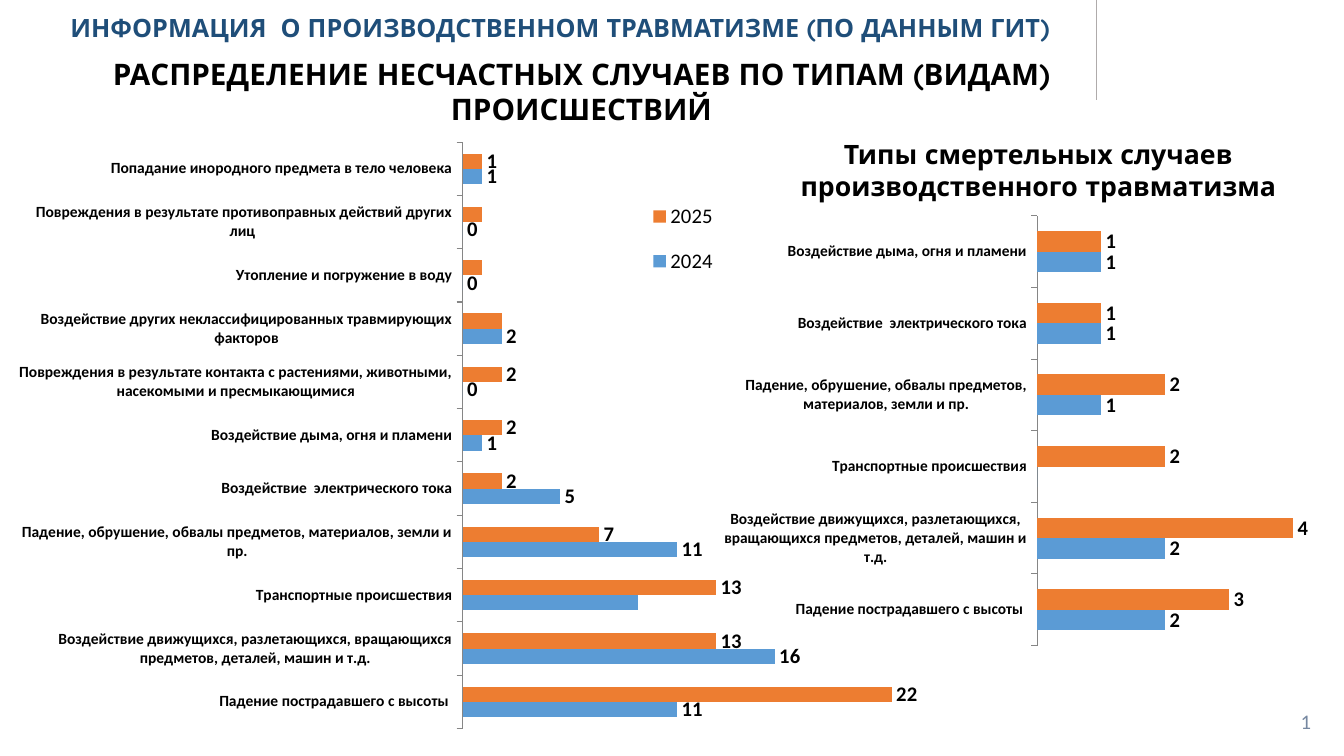
import pptx
import pptx.chart.data
import pptx.dml.color
import pptx.enum.chart
import pptx.enum.shapes
import pptx.enum.text
import pptx.oxml
import pptx.oxml.ns
import pptx.util

Inches = pptx.util.Inches
Pt = pptx.util.Pt
Align = pptx.enum.text.PP_ALIGN
Anchor = pptx.enum.text.MSO_ANCHOR
ChartEnum = pptx.enum.chart

COLORS = {"navy": "1F4E79", "black": "000000", "number": "7688A1", "rule": "AFABAB",
          "axis": "868686", "2024": "5B9BD5", "2025": "ED7D31"}

FALL = "Падение пострадавшего с высоты "
MOVING = "Воздействие движущихся, разлетающихся, вращающихся предметов, деталей, машин и т.д."
TRANSPORT = "Транспортные происшествия"
COLLAPSE = "Падение, обрушение, обвалы предметов, материалов, земли и пр."
ELECTRIC = "Воздействие  электрического тока"
SMOKE = "Воздействие дыма, огня и пламени"
COMMON_TYPES = [FALL, MOVING, TRANSPORT, COLLAPSE, ELECTRIC, SMOKE]
OTHER_TYPES = [
    "Повреждения в результате контакта с растениями, животными, насекомыми и пресмыкающимися",
    "Воздействие других неклассифицированных травмирующих факторов",
    "Утопление и погружение в воду",
    "Повреждения в результате противоправных действий других лиц ",
    "Попадание инородного предмета в тело человека",
]


def rgb(name):
    """Return the named colour."""
    return pptx.dml.color.RGBColor.from_string(COLORS[name])


def chart_layout(position, inner=False):
    """Return a manual layout for fractions of the chart area."""
    target = '<c:layoutTarget val="inner"/>' if inner else ""
    modes = "".join(f'<c:{axis}Mode val="edge"/>' for axis in "xy")
    sizes = "".join(f'<c:{key} val="{value}"/>' for key, value in zip("xywh", position))
    return pptx.oxml.parse_xml(
        f'<c:layout {pptx.oxml.ns.nsdecls("c")}><c:manualLayout>'
        f"{target}{modes}{sizes}</c:manualLayout></c:layout>")


def place_layout(element, index, layout):
    """Replace the layout of a chart part."""
    for old in element.findall(pptx.oxml.ns.qn("c:layout")):
        element.remove(old)
    element.insert(index, layout)


class SlideBuilder:
    """Hold the fonts and the current page."""

    heading_font = "Quicksand"
    body_font = "Calibri"

    def __init__(self, page):
        """Keep the page to fill."""
        self.page = page

    def style(self, font, name, size, color, bold=False):
        """Format a font."""
        font.name, font.size, font.bold = name, Pt(size), bold
        font.color.rgb = rgb(color)

    def fill_heading(self, box, text, size, color, align, insets):
        """Put one heading paragraph into a box."""
        frame = box.text_frame
        frame.word_wrap = True
        frame.auto_size = pptx.enum.text.MSO_AUTO_SIZE.NONE
        frame.vertical_anchor = Anchor.TOP
        (frame.margin_left, frame.margin_top,
         frame.margin_right, frame.margin_bottom) = map(Inches, insets)
        para = frame.paragraphs[0]
        para.alignment = align
        span = para.add_run()
        span.text = text
        self.style(span.font, self.heading_font, size, color, True)
        return para

    def title(self, place, text):
        """Fill the title placeholder."""
        box = self.page.shapes.title
        box.left, box.top, box.width, box.height = map(Inches, place)
        para = self.fill_heading(box, text, 17, "navy", Align.LEFT, (0.1, 0.01, 0.1, 0))
        para.line_spacing = 0.9

    def heading(self, place, text, size, insets=(0.1, 0.05, 0.1, 0.05)):
        """Add a centred heading."""
        box = self.page.shapes.add_textbox(*map(Inches, place))
        self.fill_heading(box, text, size, "black", Align.CENTER, insets)

    def page_number(self, place, number):
        """Add a slide number field."""
        box = self.page.shapes.add_textbox(*map(Inches, place))
        frame = box.text_frame
        frame.word_wrap = True
        frame.vertical_anchor = Anchor.MIDDLE
        para = frame.paragraphs[0]
        para.alignment = Align.RIGHT
        para._p.append(pptx.oxml.parse_xml(
            f'<a:fld {pptx.oxml.ns.nsdecls("a")} type="slidenum" '
            'id="{B6F15528-21DE-4FAA-801E-634DDDAF4B2B}"><a:rPr lang="ru-RU" sz="1400">'
            f'<a:solidFill><a:srgbClr val="{COLORS["number"]}"/></a:solidFill>'
            f'<a:latin typeface="{self.body_font}"/></a:rPr><a:t>{number}</a:t></a:fld>'))

    def rule(self, start, end):
        """Add a thin straight line."""
        line = self.page.shapes.add_connector(
            pptx.enum.shapes.MSO_CONNECTOR.STRAIGHT, *map(Inches, start + end))
        line.line.color.rgb = rgb("rule")
        line.line.width = Pt(0.75)
        line._element.spPr.append(pptx.oxml.parse_xml(
            f'<a:effectLst {pptx.oxml.ns.nsdecls("a")}/>'))

    def bar_chart(self, place, types, values, unlabelled, maximum, plot_area, legend=None):
        """Add a clustered bar chart by year."""
        data = pptx.chart.data.CategoryChartData()
        data.categories = types
        for year, counts in values.items():
            data.add_series(year, counts)
        chart = self.page.shapes.add_chart(
            ChartEnum.XL_CHART_TYPE.BAR_CLUSTERED, *map(Inches, place), data).chart
        chart.has_title = False
        self.style(chart.font, self.body_font, 18, "black")
        plot = chart.plots[0]
        plot.vary_by_categories = False
        plot.gap_width, plot.overlap = 150, 0
        for series in plot.series:
            self.color_series(series, unlabelled.get(series.name, []))

        axis = chart.category_axis
        axis.major_tick_mark = ChartEnum.XL_TICK_MARK.OUTSIDE
        axis.format.line.color.rgb = rgb("axis")
        axis.format.line.width = Pt(0.75)
        self.style(axis.tick_labels.font, self.body_font, 10.5, "black", True)
        scale = chart.value_axis
        scale.minimum_scale, scale.maximum_scale = 0, maximum
        scale.has_major_gridlines = False
        scale.visible = False
        place_layout(plot._element.getparent(), 0, chart_layout(plot_area, True))

        chart.has_legend = legend is not None
        if legend:
            chart.legend.position = ChartEnum.XL_LEGEND_POSITION.RIGHT
            chart.legend.include_in_layout = False
            self.style(chart.legend.font, self.body_font, 14, "black")
            place_layout(chart.legend._element, 1, chart_layout(legend))

    def color_series(self, series, unlabelled):
        """Colour a series and label its points."""
        series.format.fill.solid()
        series.format.fill.fore_color.rgb = rgb(series.name)
        series.invert_if_negative = False
        labels = series.data_labels
        labels.show_value = True
        labels.position = ChartEnum.XL_LABEL_POSITION.OUTSIDE_END
        self.style(labels.font, self.body_font, 14, "black", True)
        for place, index in enumerate(unlabelled):
            labels._element.insert(place, pptx.oxml.parse_xml(
                f'<c:dLbl {pptx.oxml.ns.nsdecls("c")}><c:idx val="{index}"/>'
                '<c:delete val="1"/></c:dLbl>'))


def main():
    """Build and save the slide."""
    deck = pptx.Presentation()
    deck.slide_width, deck.slide_height = Inches(12.6), Inches(7.09)
    slide = SlideBuilder(deck.slides.add_slide(deck.slide_layouts[5]))
    slide.rule((10.28, 0), (10.28, 0.94))
    slide.title((0.56, 0.14, 9.77, 0.59),
                "ИНФОРМАЦИЯ  О ПРОИЗВОДСТВЕННОМ ТРАВМАТИЗМЕ (ПО ДАННЫМ ГИТ)")
    slide.heading((0.28, 0.51, 10.34, 0.69),
                  "РАСПРЕДЕЛЕНИЕ НЕСЧАСТНЫХ СЛУЧАЕВ ПО ТИПАМ (ВИДАМ) ПРОИСШЕСТВИЙ",
                  20, (0, 0.01, 0, 0))
    slide.page_number((9.45, 6.57, 2.94, 0.38), 5)
    slide.bar_chart(
        (0.18, 1.22, 8.82, 5.67), COMMON_TYPES + OTHER_TYPES,
        {"2024": [11, 16, 9, 11, 5, 1, 0, 2, 0, 0, 1],
         "2025": [22, 13, 13, 7, 2, 2, 2, 2, 1, 1, 1]},
        {"2024": [2], "2025": [7, 8, 9]}, 25, (0.47, 0.02, 0.52, 0.97),
        legend=(0.66, 0.09, 0.09, 0.18))
    slide.bar_chart(
        (6.79, 1.9, 5.81, 4.16), COMMON_TYPES,
        {"2024": [2, 2, 0, 1, 1, 1], "2025": [3, 4, 2, 2, 1, 1]},
        {"2024": [2]}, 4.5, (0.5, 0.03, 0.47, 0.97))
    slide.heading((6.87, 1.24, 5.73, 0.71),
                  "Типы смертельных случаев производственного травматизма", 18)
    deck.save("out.pptx")


if __name__ == "__main__":
    main()
